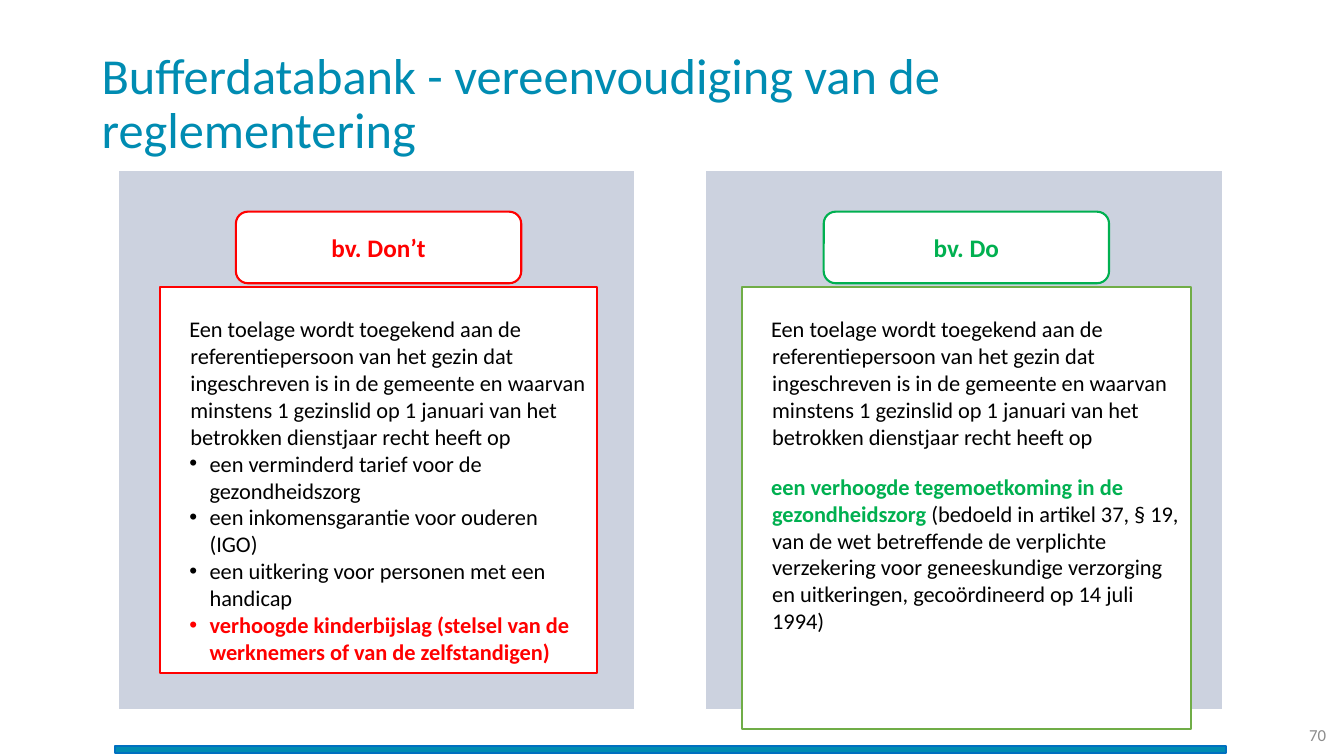
from lxml.etree import SubElement
from pptx import Presentation
from pptx.dml.color import RGBColor
from pptx.enum.shapes import MSO_SHAPE as Shape
from pptx.enum.text import MSO_ANCHOR as Anchor, PP_ALIGN as Align
from pptx.oxml.ns import qn
from pptx.util import Inches, Pt

WHITE = RGBColor(0xFF, 0xFF, 0xFF)
BLACK = RGBColor(0, 0, 0)
GREY = RGBColor(0x8C, 0x8C, 0x8C)
TEAL = RGBColor(0x00, 0x8C, 0xB2)
BLUE = RGBColor(0x00, 0x70, 0xC0)
NAVY = RGBColor(0x00, 0x20, 0x60)
RED = RGBColor(0xFF, 0, 0)
GREEN = RGBColor(0x00, 0xB0, 0x50)
OLIVE = RGBColor(0x70, 0xAD, 0x47)

INTRO = (
    "Een toelage wordt toegekend aan de referentiepersoon van het gezin dat "
    "ingeschreven is in de gemeente en waarvan minstens 1 gezinslid op 1 januari "
    "van het betrokken dienstjaar recht heeft op"
)
BENEFITS = [
    "een verminderd tarief voor de gezondheidszorg",
    "een inkomensgarantie voor ouderen (IGO)",
    "een uitkering voor personen met een handicap",
]
CHILD_BENEFIT = (
    "verhoogde kinderbijslag (stelsel van de werknemers of van de zelfstandigen)"
)
ALLOWANCE = "een verhoogde tegemoetkoming in de gezondheidszorg"
LEGAL_BASIS = (
    " (bedoeld in artikel 37, § 19, van de wet betreffende de verplichte "
    "verzekering voor geneeskundige verzorging en uitkeringen, gecoördineerd "
    "op 14 juli 1994)"
)


def add_box(slide, kind, box, fill, line, line_width=1.0):
    """Add a filled and outlined shape without a shadow."""
    shape = slide.shapes.add_shape(kind, *map(Inches, box))
    shape.shadow.inherit = False
    shape.fill.solid()
    shape.fill.fore_color.rgb = fill
    shape.line.color.rgb = line
    shape.line.width = Pt(line_width)
    return shape


def format_run(run, size, color, bold=False):
    """Set the font of one run."""
    run.font.name = "Calibri"
    run.font.size = Pt(size)
    run.font.color.rgb = color
    run.font.bold = bold


def set_label(shape, text, size, color, align, bold=False):
    """Fill a shape with a single vertically centred paragraph."""
    frame = shape.text_frame
    frame.text = text
    frame.word_wrap = True
    frame.vertical_anchor = Anchor.MIDDLE
    paragraph = frame.paragraphs[0]
    paragraph.alignment = align
    format_run(paragraph.runs[0], size, color, bold)
    return paragraph


def add_label(slide, box, text, size, color, align):
    """Add a text box with one label."""
    text_box = slide.shapes.add_textbox(*map(Inches, box))
    return set_label(text_box, text, size, color, align)


def write_paragraph(paragraph, parts, bullet=False):
    """Write (text, colour, bold) parts with a hanging indent."""
    for text, color, bold in parts:
        run = paragraph.add_run()
        run.text = text
        format_run(run, 16, color, bold)
    paragraph.alignment = Align.LEFT
    left, first = (0.39, -0.2) if bullet else (0.2, -0.01)
    properties = paragraph._p.get_or_add_pPr()
    properties.set("marL", str(Inches(left)))
    properties.set("indent", str(Inches(first)))
    if bullet:
        SubElement(properties, qn("a:buFont")).set("typeface", "Arial")
        SubElement(properties, qn("a:buChar")).set("char", "•")


def add_panel(slide, left, top, heading, color):
    """Add the tinted panel and its heading."""
    panel = add_box(slide, Shape.RECTANGLE, (left, top, 5.13, 5.35), NAVY, WHITE)
    tint = panel.fill._xPr.find(qn("a:solidFill"))[0]
    SubElement(tint, qn("a:alpha")).set("val", "20000")
    label_box = (left + 1.17, top + 0.41, 2.83, 0.71)
    label = add_box(slide, Shape.ROUNDED_RECTANGLE, label_box, WHITE, color, 1.5)
    set_label(label, heading, 18, color, Align.CENTER, True)


def add_example(slide, box, line, paragraphs, bullet=False, gap=0):
    """Add an example box: an introduction and the paragraphs after it."""
    shape = add_box(slide, Shape.RECTANGLE, box, WHITE, line, 1.5)
    frame = shape.text_frame
    frame.word_wrap = True
    frame.vertical_anchor = Anchor.TOP
    frame.margin_top = Inches(0.28)
    write_paragraph(frame.paragraphs[0], [(INTRO, BLACK, False)])
    for parts in paragraphs:
        paragraph = frame.add_paragraph()
        paragraph.space_before = Pt(gap)
        write_paragraph(paragraph, parts, bullet)


def add_footer(slide):
    """Add the bottom bar and the page number."""
    add_box(slide, Shape.RECTANGLE, (1.14, 7.4, 11.02, 0.07), TEAL, BLUE)
    add_label(slide, (12.43, 7.09, 0.82, 0.4), "70", 12, GREY, Align.RIGHT)


def main():
    """Build and save the slide."""
    presentation = Presentation()
    presentation.slide_width = Inches(13.33)
    presentation.slide_height = Inches(7.5)
    slide = presentation.slides.add_slide(presentation.slide_layouts[6])
    add_footer(slide)
    title = add_label(
        slide, (0.91, 0.32, 11.5, 1.45),
        "Bufferdatabank - vereenvoudiging van de reglementering",
        36, TEAL, Align.LEFT,
    )
    title.line_spacing = 0.9
    add_panel(slide, 1.17, 1.69, "bv. Don’t", RED)
    add_panel(slide, 7, 1.69, "bv. Do", GREEN)
    benefits = [[(text, BLACK, False)] for text in BENEFITS]
    benefits.append([(CHILD_BENEFIT, RED, True)])
    add_example(slide, (1.59, 2.85, 4.33, 3.83), RED, benefits, bullet=True)
    allowance = [(ALLOWANCE, GREEN, True), (LEGAL_BASIS, BLACK, False)]
    add_example(slide, (7.36, 2.85, 4.45, 4.38), OLIVE, [allowance], gap=16.5)
    presentation.save("out.pptx")


if __name__ == "__main__":
    main()
